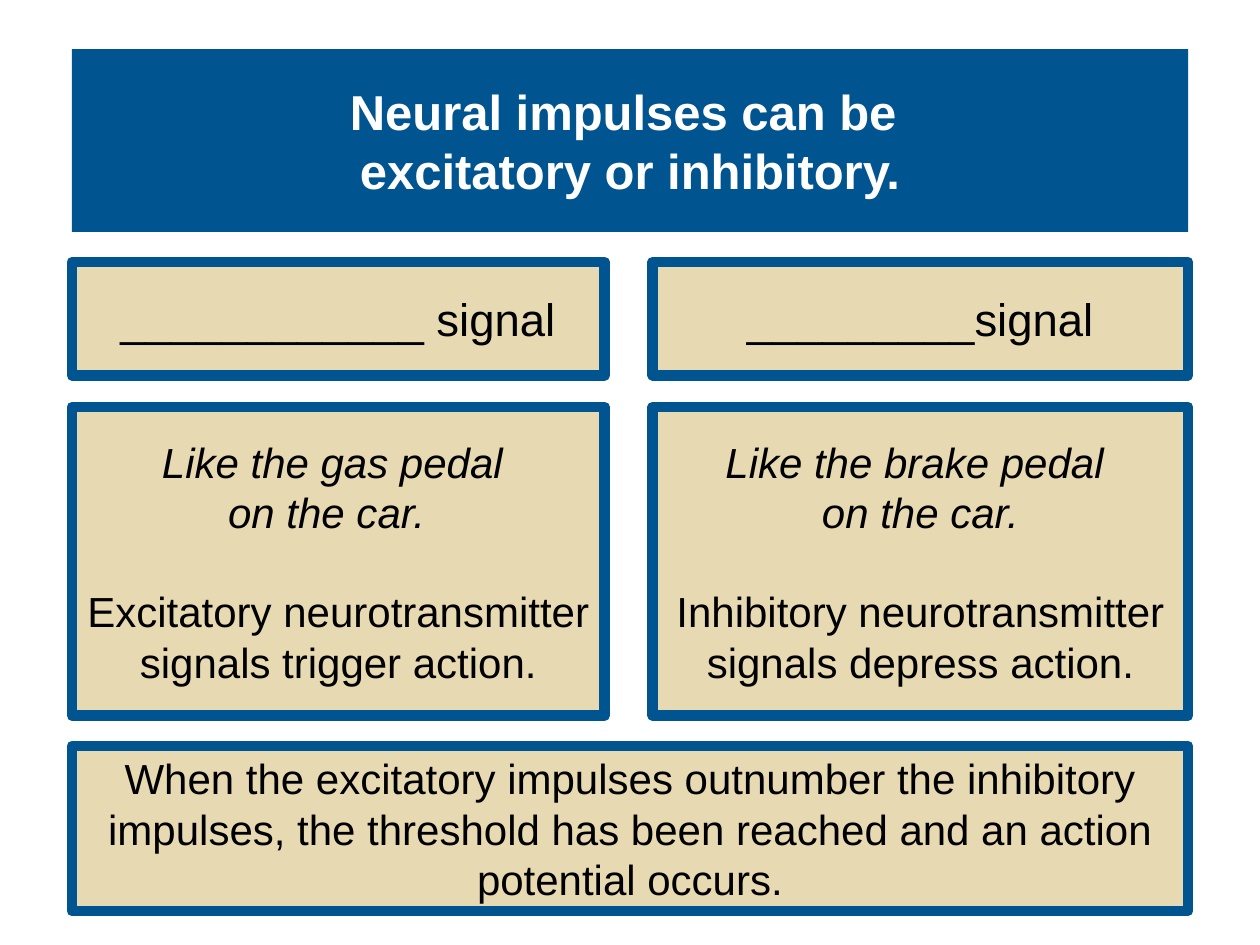
from pptx import Presentation
from pptx.dml.color import RGBColor
from pptx.enum.shapes import MSO_SHAPE
from pptx.enum.text import MSO_ANCHOR, PP_ALIGN
from pptx.util import Inches, Pt

BLUE, SAND, WHITE, BLACK = "005490", "E7D9B1", "FFFFFF", "000000"

# Grid: (start, length) in inches
LEFT, RIGHT, FULL = (0.57, 4.23), (5.18, 4.25), (0.57, 8.86)
TITLE_ROW, HEADING_ROW = (0.39, 1.45), (2.08, 0.9)
DETAIL_ROW, SUMMARY_ROW = (3.23, 2.45), (5.92, 1.31)

COLUMNS = [
    (LEFT, "____________ signal", ["Like the gas pedal ", "on the car.  "],
     "Excitatory neurotransmitter signals trigger action."),
    (RIGHT, "_________signal", ["Like the brake pedal ", "on the car."],
     "Inhibitory neurotransmitter signals depress action."),
]


def paint(color_format, color):
    color_format.rgb = RGBColor.from_string(color)


def add_box(slide, column, row, fill, border=None):
    (left, width), (top, height) = column, row
    shape = slide.shapes.add_shape(
        MSO_SHAPE.RECTANGLE, *map(Inches, (left, top, width, height)))
    shape.shadow.inherit = False
    shape.fill.solid()
    paint(shape.fill.fore_color, fill)
    if border:
        shape.line.width = Pt(6)
        paint(shape.line.color, border)
    else:
        shape.line.fill.background()
    shape.text_frame.word_wrap = True
    shape.text_frame.vertical_anchor = MSO_ANCHOR.MIDDLE
    return shape


def write(shape, lines, size, color=BLACK, bold=False):
    """Write centred paragraphs and return them."""
    frame = shape.text_frame
    for index, line in enumerate(lines):
        paragraph = frame.add_paragraph() if index else frame.paragraphs[0]
        paragraph.text = line
        paragraph.alignment = PP_ALIGN.CENTER
        font = paragraph.font
        font.name, font.size, font.bold = "Arial", Pt(size), bold
        paint(font.color, color)
    return frame.paragraphs


def add_panel(slide, column, row, lines, size=24):
    return write(add_box(slide, column, row, SAND, BLUE), lines, size)


def add_detail(slide, column, comparison, effect):
    """An italic comparison, then its effect one line below."""
    paragraphs = add_panel(slide, column, DETAIL_ROW, [*comparison, effect])
    for paragraph in paragraphs[:-1]:
        paragraph.font.italic = True
    paragraphs[-1].space_before = Pt(28)


def main():
    presentation = Presentation()
    presentation.slide_width, presentation.slide_height = Inches(10), Inches(7.5)
    slide = presentation.slides.add_slide(presentation.slide_layouts[6])

    # Title
    title = add_box(slide, FULL, TITLE_ROW, BLUE)
    write(title, ["Neural impulses can be \vexcitatory or inhibitory."], 28, WHITE, True)

    # Two kinds of signal
    for column, heading, comparison, effect in COLUMNS:
        add_panel(slide, column, HEADING_ROW, [heading], 26)
        add_detail(slide, column, comparison, effect)

    # Summary
    add_panel(slide, FULL, SUMMARY_ROW, [
        "When the excitatory impulses outnumber the inhibitory impulses, "
        "the threshold has been reached and an action potential occurs."])

    presentation.save("out.pptx")


if __name__ == "__main__":
    main()
